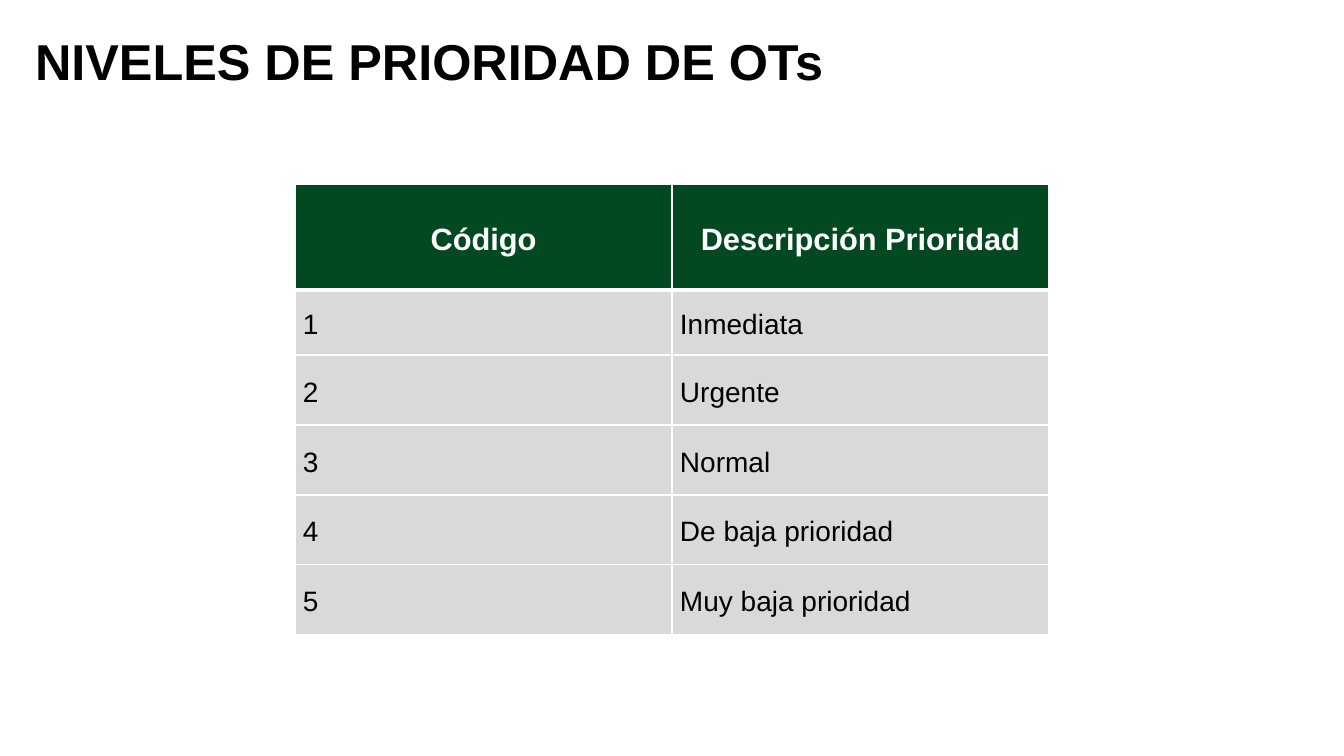
"""Build the slide with the priority levels of work orders."""
from lxml import etree
from pptx import Presentation, util as u
from pptx.dml.color import RGBColor
from pptx.enum import text
from pptx.oxml.ns import qn

TITLE = "NIVELES DE PRIORIDAD DE OTs"
ROWS = [
    ("Código", "Descripción Prioridad"),
    ("1", "Inmediata"),
    ("2", "Urgente"),
    ("3", "Normal"),
    ("4", "De baja prioridad"),
    ("5", "Muy baja prioridad"),
]
COLORS = {"header": "024921", "body": "D9D9D9", "white": "FFFFFF", "black": "000000"}
TITLE_BOX = (25, 25, 1048, 72)
TABLE_LEFT, TABLE_TOP = 295, 184
COLUMN_WIDTH = 377
ROW_HEIGHTS = [106, 65] + [70] * 4
CELL_MARGIN = 8
TITLE_FONT = {"name": "Arial", "size": u.Pt(36), "bold": True}
HEADER_FONT = {"name": "Arial", "size": u.Pt(22), "bold": True}
BODY_FONT = {"name": "Arial", "size": u.Pt(20), "bold": False}


def px(length):
    return u.Emu(round(length * 914400 / 100.8))


def set_values(target, values):
    for name, value in values.items():
        setattr(target, name, value)


def rgb(name):
    return RGBColor.from_string(COLORS[name])


def format_paragraph(paragraph, layout, font, color):
    set_values(paragraph, layout)
    set_values(paragraph.font, font)
    paragraph.font.color.rgb = rgb(color)


def add_borders(cell, bottom_width):
    properties = cell._tc.get_or_add_tcPr()
    widths = {"a:lnL": 1, "a:lnR": 1, "a:lnT": 1, "a:lnB": bottom_width}
    for position, (tag, width) in enumerate(widths.items()):
        line = etree.Element(qn(tag), w=str(u.Pt(width)))
        fill = etree.SubElement(line, qn("a:solidFill"))
        etree.SubElement(fill, qn("a:srgbClr"), val=COLORS["white"])
        properties.insert(position, line)


def format_cell(cell, content, is_header):
    cell.text = content
    set_values(cell, {
        "vertical_anchor": text.MSO_ANCHOR.MIDDLE,
        "margin_left": px(CELL_MARGIN),
        "margin_right": px(CELL_MARGIN),
        "margin_top": 0,
        "margin_bottom": 0,
    })
    cell.fill.solid()
    cell.fill.fore_color.rgb = rgb("header" if is_header else "body")
    add_borders(cell, 3 if is_header else 1)
    alignment = text.PP_ALIGN.CENTER if is_header else text.PP_ALIGN.LEFT
    format_paragraph(
        cell.text_frame.paragraphs[0],
        {"alignment": alignment, "line_spacing": 1.15, "space_after": u.Pt(10)},
        HEADER_FONT if is_header else BODY_FONT,
        "white" if is_header else "black",
    )


def add_title(slide):
    title = slide.shapes.title
    set_values(title, dict(zip(("left", "top", "width", "height"), map(px, TITLE_BOX))))
    title.text = TITLE
    set_values(title.text_frame, {
        "word_wrap": True,
        "vertical_anchor": text.MSO_ANCHOR.TOP,
        "auto_size": text.MSO_AUTO_SIZE.SHAPE_TO_FIT_TEXT,
    })
    format_paragraph(title.text_frame.paragraphs[0],
                     {"alignment": text.PP_ALIGN.LEFT}, TITLE_FONT, "black")


def add_priority_table(slide):
    column_count = len(ROWS[0])
    table = slide.shapes.add_table(
        len(ROWS), column_count, px(TABLE_LEFT), px(TABLE_TOP),
        px(COLUMN_WIDTH * column_count), px(sum(ROW_HEIGHTS)),
    ).table
    table.horz_banding = False
    for column in table.columns:
        column.width = px(COLUMN_WIDTH)
    for row_index, (contents, height) in enumerate(zip(ROWS, ROW_HEIGHTS)):
        table.rows[row_index].height = px(height)
        for column_index, content in enumerate(contents):
            format_cell(table.cell(row_index, column_index), content, row_index == 0)


def main():
    presentation = Presentation()
    set_values(presentation, {"slide_width": px(1344), "slide_height": px(756)})
    slide = presentation.slides.add_slide(presentation.slide_layouts[5])
    add_title(slide)
    add_priority_table(slide)
    presentation.save("out.pptx")


if __name__ == "__main__":
    main()
